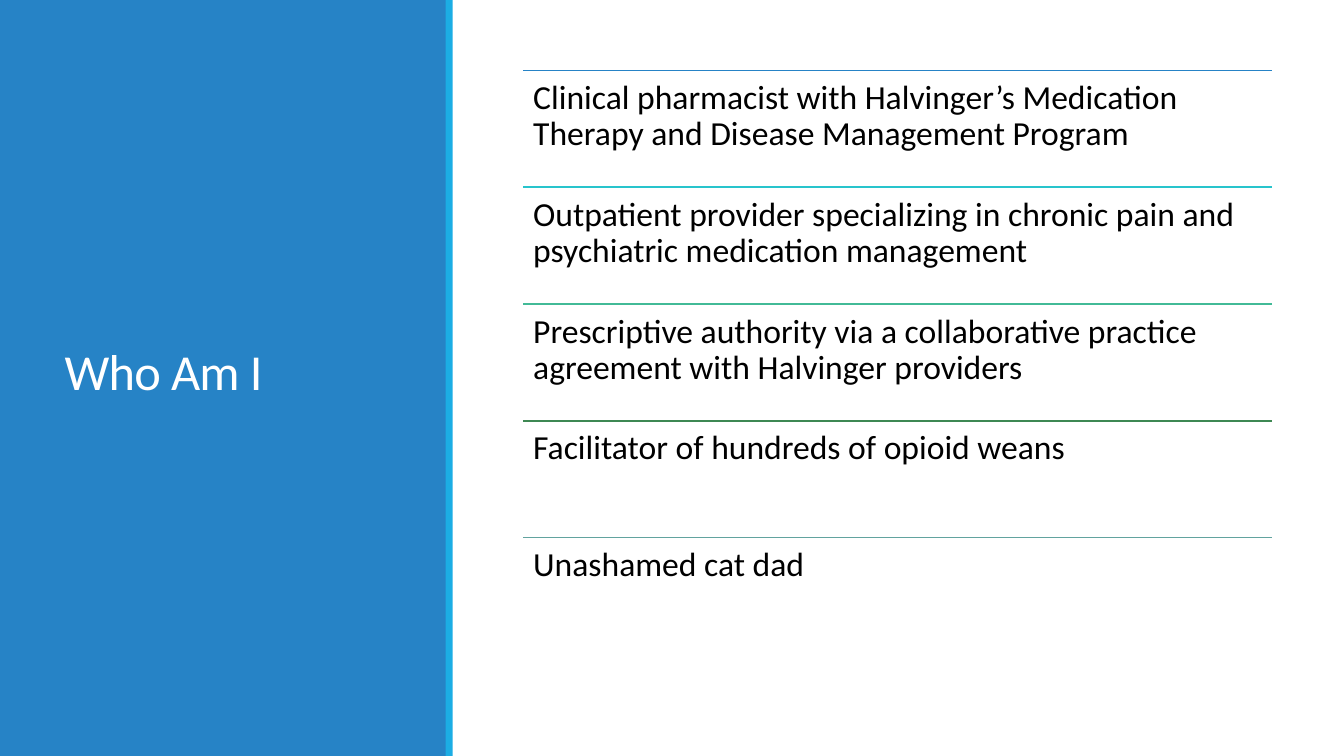
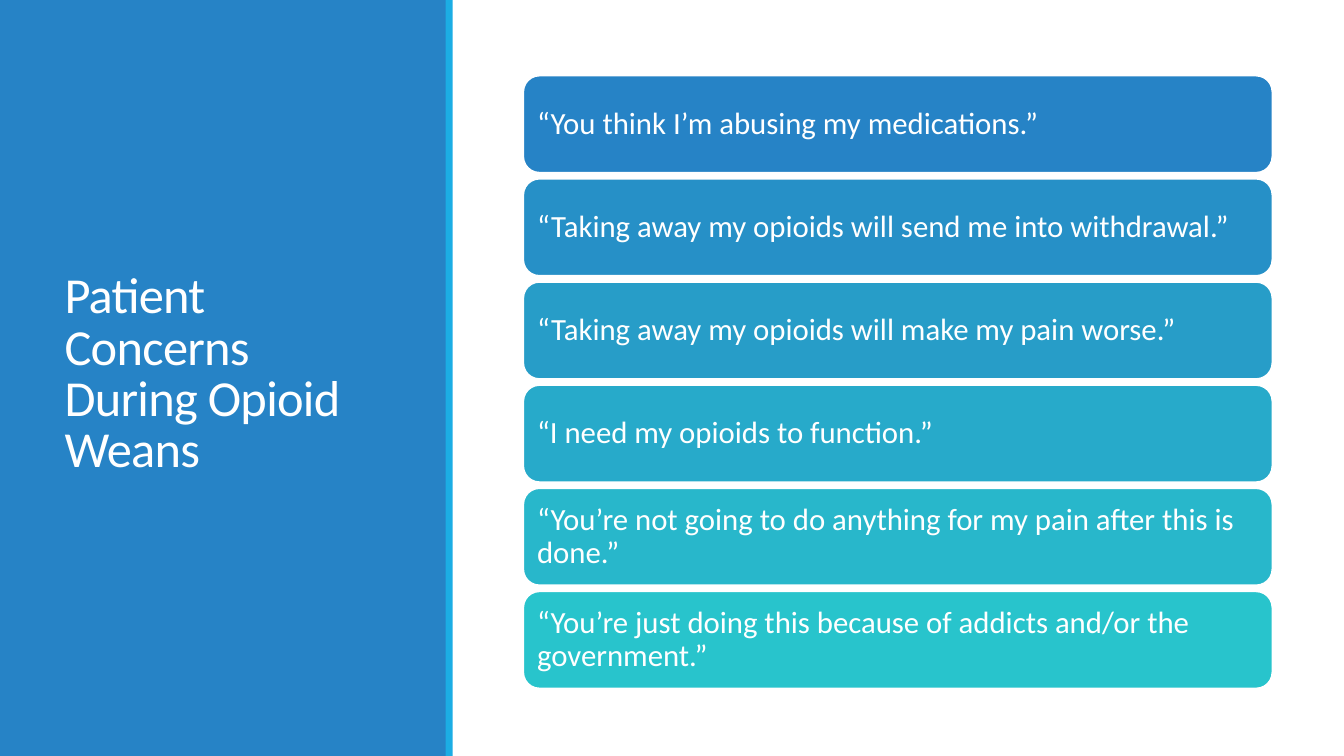
"""Build two slides that share a blue title panel on the left."""
import pptx
import pptx.dml.color
import pptx.enum.shapes
import pptx.enum.text
import pptx.oxml
import pptx.oxml.ns
import pptx.util

Inches = pptx.util.Inches
Pt = pptx.util.Pt
RGBColor = pptx.dml.color.RGBColor
MSO_SHAPE = pptx.enum.shapes.MSO_SHAPE
MSO_ANCHOR = pptx.enum.text.MSO_ANCHOR
PP_ALIGN = pptx.enum.text.PP_ALIGN

BLUE = RGBColor(0x26, 0x83, 0xC6)
SKY = RGBColor(0x1C, 0xAD, 0xE4)
TURQUOISE = RGBColor(0x28, 0xC4, 0xCC)
SEA_GREEN = RGBColor(0x42, 0xBA, 0x97)
GREEN = RGBColor(0x3E, 0x88, 0x53)
GREY_GREEN = RGBColor(0x62, 0xA3, 0x9F)
WHITE = RGBColor(0xFF, 0xFF, 0xFF)
BLACK = RGBColor(0x00, 0x00, 0x00)

FONT = "Calibri"
LINE_WIDTH = Pt(1.25)
CONTENT_LEFT, CONTENT_WIDTH = 5.19, 7.43
MARGINS = ("margin_left", "margin_top", "margin_right", "margin_bottom")

FACTS = (
    ("Clinical pharmacist with Halvinger’s Medication Therapy and Disease Management Program", BLUE),
    ("Outpatient provider specializing in chronic pain and psychiatric medication management", TURQUOISE),
    ("Prescriptive authority via a collaborative practice agreement with Halvinger providers", SEA_GREEN),
    ("Facilitator of hundreds of opioid weans", GREEN),
    ("Unashamed cat dad", GREY_GREEN),
)
CONCERNS = (
    "“You think I’m abusing my medications.”",
    "“Taking away my opioids will send me into withdrawal.”",
    "“Taking away my opioids will make my pain worse.”",
    "“I need my opioids to function.”",
    "“You’re not going to do anything for my pain after this is done.”",
    "“You’re just doing this because of addicts and/or the government.”",
)


def set_attributes(target, values):
    """Set every named attribute of the target."""
    for name, value in values.items():
        setattr(target, name, value)


def write_text(shape, text, size, color, line_spacing, anchor, margin):
    """Write one left-aligned paragraph into a shape."""
    frame = shape.text_frame
    frame.text = text
    set_attributes(frame, {
        "word_wrap": True,
        "auto_size": pptx.enum.text.MSO_AUTO_SIZE.NONE,
        "vertical_anchor": anchor,
        **dict.fromkeys(MARGINS, Inches(margin)),
    })
    paragraph = frame.paragraphs[0]
    set_attributes(paragraph, {"alignment": PP_ALIGN.LEFT, "line_spacing": line_spacing})
    font = paragraph.runs[0].font
    set_attributes(font, {"name": FONT, "size": Pt(size), "bold": False})
    font.color.rgb = color


def add_box(slide, kind, left, top, width, height, fill):
    """Add a filled shape without outline or shadow."""
    shape = slide.shapes.add_shape(kind, Inches(left), Inches(top), Inches(width), Inches(height))
    shape.shadow.inherit = False
    shape.fill.solid()
    shape.fill.fore_color.rgb = fill
    shape.line.fill.background()
    return shape


def add_rule(slide, top, color):
    """Add a horizontal line across the content area."""
    rule = slide.shapes.add_connector(
        pptx.enum.shapes.MSO_CONNECTOR.STRAIGHT, Inches(CONTENT_LEFT), Inches(top),
        Inches(CONTENT_LEFT + CONTENT_WIDTH), Inches(top))
    rule.line.color.rgb = color
    rule.line.width = LINE_WIDTH
    rule.element.spPr.append(pptx.oxml.parse_xml(
        f'<a:effectLst {pptx.oxml.ns.nsdecls("a")}/>'))


def add_panel_to_layout(slide, layout):
    """Put the title panel and its edge on the shared layout."""
    for left, width, fill in ((0, 4.43, BLUE), (4.42, 0.07, SKY)):
        band = add_box(slide, MSO_SHAPE.RECTANGLE, left, 0, width, 7.5, fill)
        layout.shapes.element.append(band.element)


def format_title(slide, text):
    """Move the title onto the panel and style it."""
    title = slide.shapes.title
    set_attributes(title, {"left": Inches(0.54), "top": Inches(0.57),
                           "width": Inches(3.37), "height": Inches(6.31)})
    write_text(title, text, 36, WHITE, 0.85, MSO_ANCHOR.MIDDLE, 0.1)
    for properties in title.element.iter(pptx.oxml.ns.qn("a:rPr")):
        properties.set("spc", "-50")


def add_ruled_list(slide, facts):
    """Add equal rows of text, each under a coloured line."""
    first_top, total_height = 0.7, 5.79
    row_height = total_height / len(facts)
    for index, (text, color) in enumerate(facts):
        top = first_top + index * row_height
        add_rule(slide, top, color)
        box = slide.shapes.add_textbox(Inches(CONTENT_LEFT), Inches(top),
                                       Inches(CONTENT_WIDTH), Inches(row_height))
        write_text(box, text, 24, BLACK, 0.9, MSO_ANCHOR.TOP, 0.1)


def blend(start, end, share):
    """Mix two colours by the given share of the second."""
    return RGBColor(*(round(a + (b - a) * share) for a, b in zip(start, end)))


def add_cards(slide, texts):
    """Add equal rounded cards shading from blue to turquoise."""
    first_top, total_height, gap = 0.75, 6.08, 0.06
    height = (total_height + gap) / len(texts) - gap
    for index, text in enumerate(texts):
        fill = blend(BLUE, TURQUOISE, index / (len(texts) - 1))
        card = add_box(slide, MSO_SHAPE.ROUNDED_RECTANGLE, CONTENT_LEFT,
                       first_top + index * (height + gap), CONTENT_WIDTH, height, fill)
        card.line.color.rgb = WHITE
        card.line.width = LINE_WIDTH
        write_text(card, text, 22, WHITE, 0.9, MSO_ANCHOR.MIDDLE, 0.09)


def main():
    """Build and save the presentation."""
    presentation = pptx.Presentation()
    set_attributes(presentation, {"slide_width": Inches(13.33), "slide_height": Inches(7.5)})
    layout = presentation.slide_layouts.get_by_name("Title Only")

    introduction = presentation.slides.add_slide(layout)
    add_panel_to_layout(introduction, layout)
    format_title(introduction, "Who Am I")
    add_ruled_list(introduction, FACTS)

    concerns = presentation.slides.add_slide(layout)
    format_title(concerns, "Patient Concerns During Opioid Weans")
    add_cards(concerns, CONCERNS)

    presentation.save("out.pptx")


if __name__ == "__main__":
    main()
